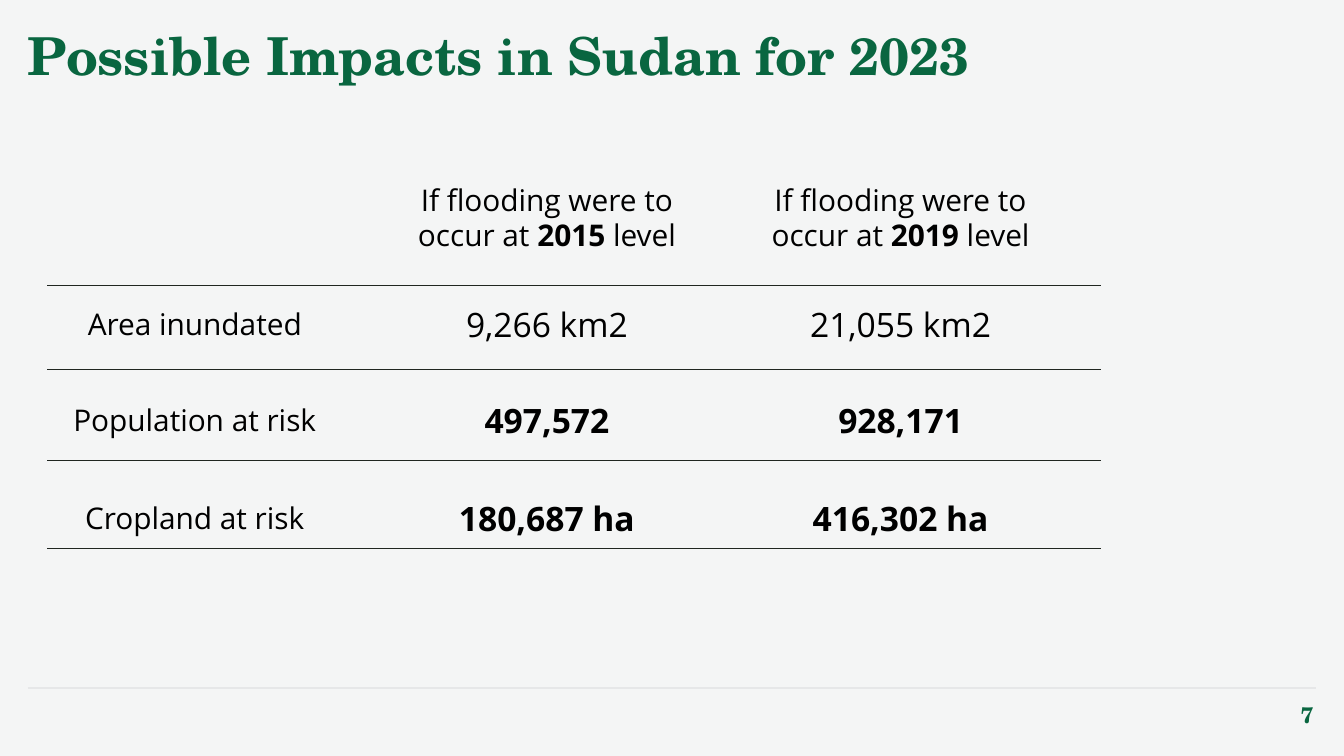
from dataclasses import dataclass

from pptx import Presentation
from pptx.dml.color import RGBColor
from pptx.enum.shapes import MSO_CONNECTOR
from pptx.enum.text import MSO_ANCHOR, MSO_AUTO_SIZE, PP_ALIGN
from pptx.oxml.ns import qn
from pptx.util import Pt


@dataclass(frozen=True)
class Theme:
    background: str = "F4F5F5"
    green: str = "096640"
    ink: str = "000000"
    rule: str = "202620"
    footer_rule: str = "E6E7E8"
    heading_font: str = "TeX Gyre Schola"
    body_font: str = "Open Sans"
    title_size: float = 28
    value_size: float = 18
    label_size: float = 16
    number_size: float = 12
    line_width: float = 0.75


class SlideBuilder:
    def __init__(self, prs, theme):
        self.theme = theme
        self.slide = prs.slides.add_slide(prs.slide_layouts[5])
        fill = self.slide.background.fill
        fill.solid()
        fill.fore_color.rgb = RGBColor.from_string(theme.background)

    def format_frame(self, tf, insets=(7.2, 3.6, 7.2, 3.6), **values):
        sides = ("margin_left", "margin_top", "margin_right", "margin_bottom")
        frame_values = {side: Pt(inset) for side, inset in zip(sides, insets)}
        frame_values |= {"word_wrap": True, "vertical_anchor": MSO_ANCHOR.TOP} | values
        for name, value in frame_values.items():
            setattr(tf, name, value)

    def add_runs(self, tf, runs, align, color, **font_values):
        """Put (text, bold) runs into the first paragraph."""
        p = tf.paragraphs[0]
        p.alignment = align
        for text, bold in runs:
            r = p.add_run()
            r.text = text
            for name, value in (font_values | {"bold": bold}).items():
                setattr(r.font, name, value)
            r.font.color.rgb = RGBColor.from_string(color)

    def title(self, text, left, top, width, height):
        t = self.theme
        sp = self.slide.shapes.title
        sp.left, sp.top, sp.width, sp.height = map(Pt, (left, top, width, height))
        self.format_frame(sp.text_frame, (0, 7.2, 7.2, 7.2), auto_size=MSO_AUTO_SIZE.NONE)
        self.add_runs(sp.text_frame, [(text, True)], PP_ALIGN.LEFT, t.green,
                      name=t.heading_font, size=Pt(t.title_size))

    def page_number(self, text, left, top, width, height):
        t = self.theme
        sp = self.slide.shapes.add_textbox(*map(Pt, (left, top, width, height)))
        self.format_frame(sp.text_frame, (7.2,) * 4, vertical_anchor=MSO_ANCHOR.MIDDLE)
        self.add_runs(sp.text_frame, [(text, True)], PP_ALIGN.RIGHT, t.green,
                      name=t.heading_font, size=Pt(t.number_size))

    def cell(self, runs, center, top, width, height, size, wrap=True):
        t = self.theme
        sp = self.slide.shapes.add_textbox(
            *map(Pt, (center - width / 2, top, width, height)))
        self.format_frame(sp.text_frame, word_wrap=wrap,
                          auto_size=MSO_AUTO_SIZE.SHAPE_TO_FIT_TEXT)
        self.add_runs(sp.text_frame, runs, PP_ALIGN.CENTER, t.ink,
                      name=t.body_font, size=Pt(size))

    def rule(self, left, right, y, color):
        line = self.slide.shapes.add_connector(
            MSO_CONNECTOR.STRAIGHT, *map(Pt, (left, y, right, y)))
        line.line.color.rgb = RGBColor.from_string(color)
        line.line.width = Pt(self.theme.line_width)
        sp_pr = line._element.spPr
        sp_pr.append(sp_pr.makeelement(qn("a:effectLst"), {}))


def main():
    prs = Presentation()
    prs.slide_width, prs.slide_height = Pt(720), Pt(405)
    theme = Theme()
    s = SlideBuilder(prs, theme)

    s.rule(15, 705, 368.6, theme.footer_rule)
    s.title("Possible Impacts in Sudan for 2023", 15, 5, 647, 45.4)
    s.page_number("7", 667.5, 367.2, 43.2, 31)

    label_center = 104.4
    scenarios = [("2015", 293, 185.8), ("2019", 482.5, 192.2)]
    for year, center, width in scenarios:
        header = [("If flooding were to occur at ", False), (year, True), (" level", False)]
        s.cell(header, center, 93.6, width, 46, theme.label_size)

    # Label, values, bold values, vertical centre, value box widths
    rows = [
        ("Area inundated", ("9,266 km2", "21,055 km2"), False, 173.8, (102.2, 112.3)),
        ("Population at risk", ("497,572", "928,171"), True, 225, (82, 82)),
        ("Cropland at risk", ("180,687 ha", "416,302 ha"), True, 277.7, (109.4, 109.4)),
    ]
    label_height, value_height = 26.6, 29
    for label, values, bold, middle, widths in rows:
        s.cell([(label, False)], label_center, middle - label_height / 2,
               158.4, label_height, theme.label_size)
        for (_, center, _), value, width in zip(scenarios, values, widths):
            s.cell([(value, bold)], center, middle - value_height / 2,
                   width, value_height, theme.value_size, wrap=False)

    for y in (152.8, 198, 246.8, 293.8):
        s.rule(25.2, 590, y, theme.rule)

    prs.save("out.pptx")


if __name__ == "__main__":
    main()
